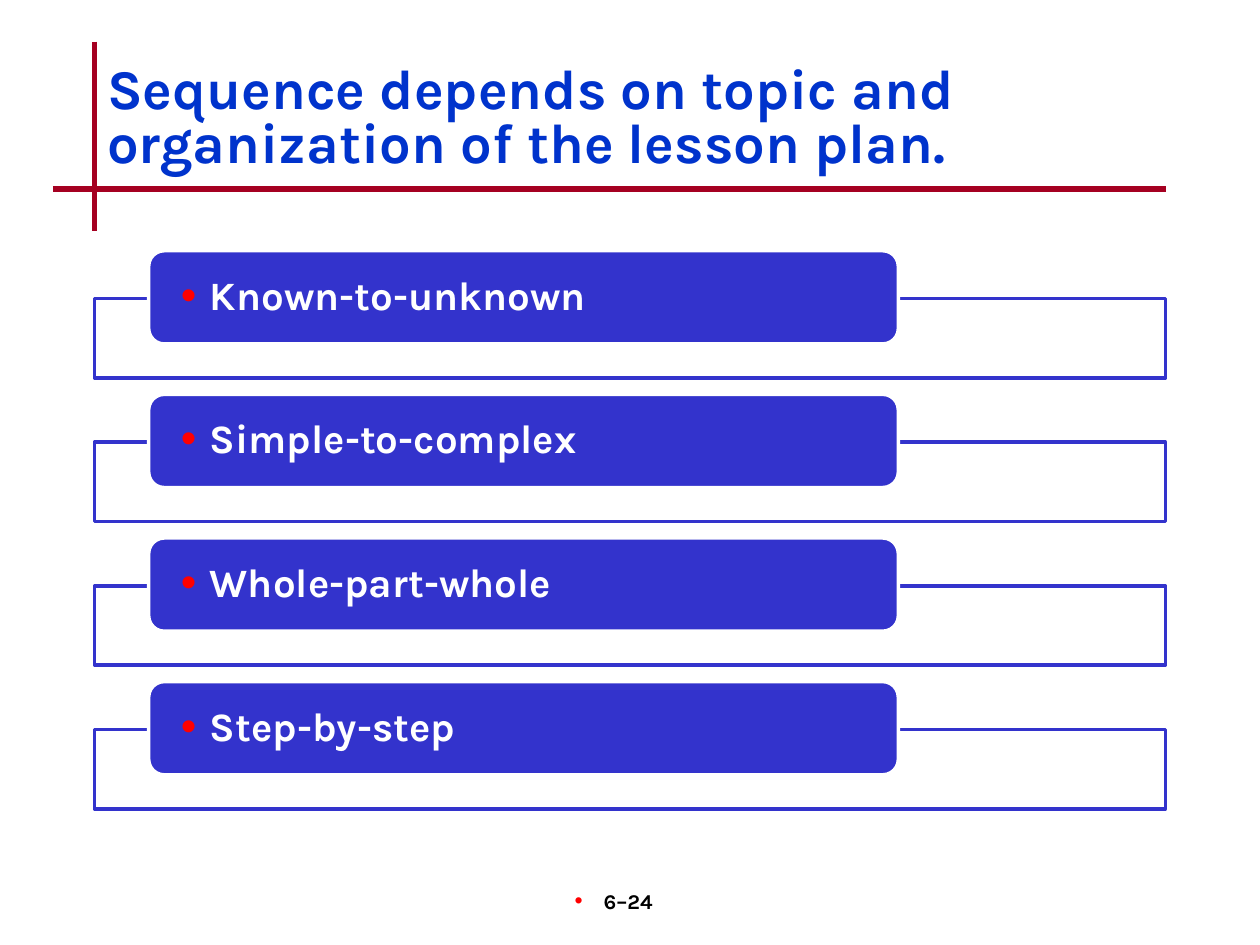
from pptx import Presentation
from pptx.dml.color import RGBColor
from pptx.enum.shapes import MSO_CONNECTOR as CONNECTOR, MSO_SHAPE as SHAPE
from pptx.enum.text import MSO_ANCHOR as ANCHOR, MSO_AUTO_SIZE as AUTO_SIZE, PP_ALIGN as ALIGN
from pptx.oxml.ns import qn
from pptx.util import Pt
from lxml.etree import SubElement

PX = 9144  # 100 px to the inch
BLUE, CRIMSON, WHITE = "3333CC", "A50021", "FFFFFF"
rgb = RGBColor.from_string


def write(shape, text, size, color, bold=True, align=ALIGN.LEFT, anchor=ANCHOR.MIDDLE,
          spacing=1.0, inset=(10, 5), bullet_indent=0, right_margin=0):
    frame = shape.text_frame
    frame.word_wrap = True
    frame.auto_size = AUTO_SIZE.NONE
    frame.vertical_anchor = anchor
    frame.margin_left = frame.margin_right = inset[0] * PX
    frame.margin_top = frame.margin_bottom = inset[1] * PX
    line = frame.paragraphs[0]
    line.text = text
    line.alignment = align
    line.line_spacing = spacing
    if bullet_indent:
        props = line._p.get_or_add_pPr()
        props.set("marL", str(bullet_indent * PX))
        props.set("marR", str(right_margin * PX))
        props.set("indent", str(-bullet_indent * PX))
        SubElement(SubElement(props, qn("a:buClr")), qn("a:srgbClr"), val="FF0000")
        SubElement(props, qn("a:buSzPct"), val="110000")
        SubElement(props, qn("a:buFont"), typeface="Arial")
        SubElement(props, qn("a:buChar"), char="•")
    font = line.runs[0].font
    font.name, font.size, font.bold = "Karla", Pt(size), bold
    font.color.rgb = rgb(color)


def add_box(kind, left, top, width, height, fill, border):
    box = slide.shapes.add_shape(kind, left * PX, top * PX, width * PX, height * PX)
    box.shadow.inherit = False
    box.fill.solid()
    box.fill.fore_color.rgb = rgb(fill)
    box.line.color.rgb = rgb(border)
    box.line.width = Pt(2)
    return box


deck = Presentation()
deck.slide_width, deck.slide_height = 1000 * PX, 750 * PX
slide = deck.slides.add_slide(deck.slide_layouts[5])

# Crossed rules around the title
for x1, y1, x2, y2 in [(75, 33, 75, 183), (42, 150, 925, 150)]:
    rule = slide.shapes.add_connector(CONNECTOR.STRAIGHT, x1 * PX, y1 * PX, x2 * PX, y2 * PX)
    rule.line.color.rgb = rgb(CRIMSON)
    rule.line.width = Pt(3)
    SubElement(rule._element.spPr, qn("a:effectLst"))

# Title
title = slide.shapes.title
title.left, title.top, title.width, title.height = 75 * PX, 33 * PX, 850 * PX, 125 * PX
write(title, "Sequence depends on topic and organization of the lesson plan.",
      32, "0033CC", spacing=0.8)

# Sequences: a label overlapping an outlined frame, at equal steps
sequences = ["Known-to-unknown", "Simple-to-complex", "Whole-part-whole", "Step-by-step"]
for row, sequence in enumerate(sequences):
    top = 199 + row * 114
    frame = add_box(SHAPE.RECTANGLE, 75, top + 38, 850, 63, WHITE, BLUE)
    frame_color = frame.fill._xPr.find(qn("a:solidFill"))[0]
    SubElement(frame_color, qn("a:alpha"), val="90000")
    label = add_box(SHAPE.ROUNDED_RECTANGLE, 118, top, 595, 74, BLUE, WHITE)
    write(label, sequence, 23, WHITE, spacing=0.9, inset=(22, 0), bullet_indent=23)

# Page number
page_number = slide.shapes.add_textbox(392 * PX, 700 * PX, 208 * PX, 50 * PX)
write(page_number, "6–24", 12, "000000", align=ALIGN.CENTER, anchor=ANCHOR.TOP,
      bullet_indent=23, right_margin=18)

deck.save("out.pptx")
